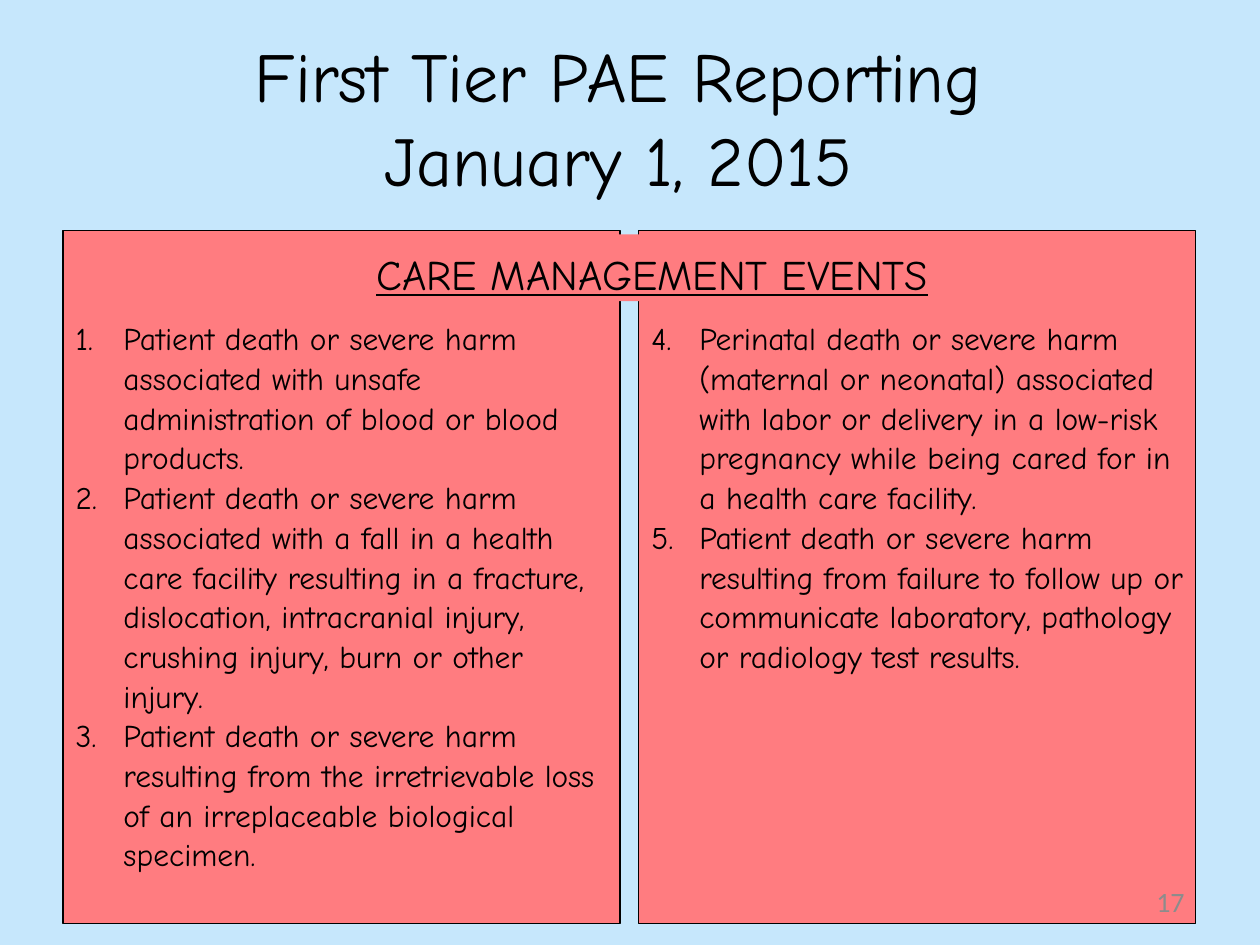
from lxml import etree
from pptx import Presentation
from pptx.dml.color import RGBColor
from pptx.enum.shapes import MSO_SHAPE
from pptx.enum.text import MSO_ANCHOR, MSO_AUTO_SIZE, PP_ALIGN
from pptx.oxml.ns import qn
from pptx.util import Inches, Pt

CENTER, RIGHT = PP_ALIGN.CENTER, PP_ALIGN.RIGHT
TOP, MIDDLE = MSO_ANCHOR.TOP, MSO_ANCHOR.MIDDLE
FIXED = MSO_AUTO_SIZE.NONE
RECT = MSO_SHAPE.RECTANGLE

COLORS = {"sky": "C6E7FC", "coral": "FF7C80", "ink": "000000", "gray": "8C8C8C"}
FONT = "Comic Neue"
WIDTH, HEIGHT = 10, 7.5
LEFT, TOP_ROW, COL, GAP, TALL = 0.5, 1.83, 4.42, 0.15, 5.5
INDENT = 0.38

TITLE = "First Tier PAE Reporting \vJanuary 1, 2015 "
HEADING = "CARE MANAGEMENT EVENTS"
EVENTS = [
    [
        "Patient death or severe harm associated with unsafe administration "
        "of blood or blood products.",
        "Patient death or severe harm associated with a fall in a health care "
        "facility resulting in a fracture, dislocation, intracranial injury, "
        "crushing injury, burn or other injury.",
        "Patient death or severe harm resulting from the irretrievable loss "
        "of an irreplaceable biological specimen.",
    ],
    [
        "Perinatal death or severe harm (maternal or neonatal) associated with "
        "labor or delivery in a low-risk pregnancy while being cared for in a "
        "health care facility.",
        "Patient death or severe harm resulting from failure to follow up or "
        "communicate laboratory, pathology or radiology test results.",
    ],
]


def color(name):
    return RGBColor.from_string(COLORS[name])


def apply(item, values):
    for name, value in values.items():
        setattr(item, name, value)


def place(shape, left, top, width, height):
    box = {"left": left, "top": top, "width": width, "height": height}
    apply(shape, {name: Inches(size) for name, size in box.items()})


def paint(shape):
    shape.fill.solid()
    shape.fill.fore_color.rgb = color("coral")


def write(par, text, size, ink="ink", font=FONT, underline=None, **form):
    par.text = text
    apply(par, form)
    for run in par.runs:
        apply(run.font, {"name": font, "size": Pt(size), "underline": underline})
        run.font.color.rgb = color(ink)


def number(par, start):
    """Give a paragraph a hanging indent and an automatic number."""
    props = par._p.get_or_add_pPr()
    props.set("marL", str(Inches(INDENT)))
    props.set("indent", str(-Inches(INDENT)))
    mark = etree.SubElement(props, qn("a:buAutoNum"), type="arabicPeriod")
    if start > 1:
        mark.set("startAt", str(start))


def add_title(slide):
    title = slide.shapes.title
    place(title, LEFT, 0.3, WIDTH - 2 * LEFT, 1.25)
    apply(title.text_frame, {"auto_size": FIXED, "vertical_anchor": MIDDLE})
    write(title.text_frame.paragraphs[0], TITLE, 40, alignment=CENTER)


def add_list(panel, col, items, start):
    place(panel, LEFT + col * (COL + GAP), TOP_ROW, COL, TALL)
    paint(panel)
    panel.line.color.rgb = color("ink")
    panel.line.width = Pt(0.75)
    frame = panel.text_frame
    apply(frame, {"auto_size": FIXED, "vertical_anchor": TOP,
                  "margin_top": Inches(0.69)})
    for i, item in enumerate(items):
        par = frame.add_paragraph() if i else frame.paragraphs[0]
        write(par, item, 18, line_spacing=1.05, space_before=Pt(0))
        number(par, start)


def add_heading(slide):
    band = slide.shapes.add_shape(RECT, 0, 0, 0, 0)
    place(band, 2.1, 1.86, 5.65, 0.53)
    paint(band)
    band.line.fill.background()
    band.shadow.inherit = False
    apply(band.text_frame, {"word_wrap": False, "vertical_anchor": TOP})
    par = band.text_frame.paragraphs[0]
    write(par, HEADING, 24, underline=True, alignment=CENTER, line_spacing=1.15)
    par._p.get_or_add_pPr().set("marL", str(Inches(0.5)))


def add_page(slide):
    box = slide.shapes.add_textbox(0, 0, 0, 0)
    place(box, 7.17, 6.95, 2.33, 0.4)
    apply(box.text_frame, {"word_wrap": True, "vertical_anchor": MIDDLE})
    write(box.text_frame.paragraphs[0], "17", 16, "gray", "Calibri",
          alignment=RIGHT)


def main():
    deck = Presentation()
    apply(deck, {"slide_width": Inches(WIDTH), "slide_height": Inches(HEIGHT)})
    slide = deck.slides.add_slide(deck.slide_layouts.get_by_name("Two Content"))
    slide.background.fill.solid()
    slide.background.fill.fore_color.rgb = color("sky")
    add_title(slide)
    start = 1
    for col, items in enumerate(EVENTS):
        add_list(slide.placeholders[col + 1], col, items, start)
        start += len(items)
    add_page(slide)
    add_heading(slide)
    deck.save("out.pptx")


if __name__ == "__main__":
    main()
